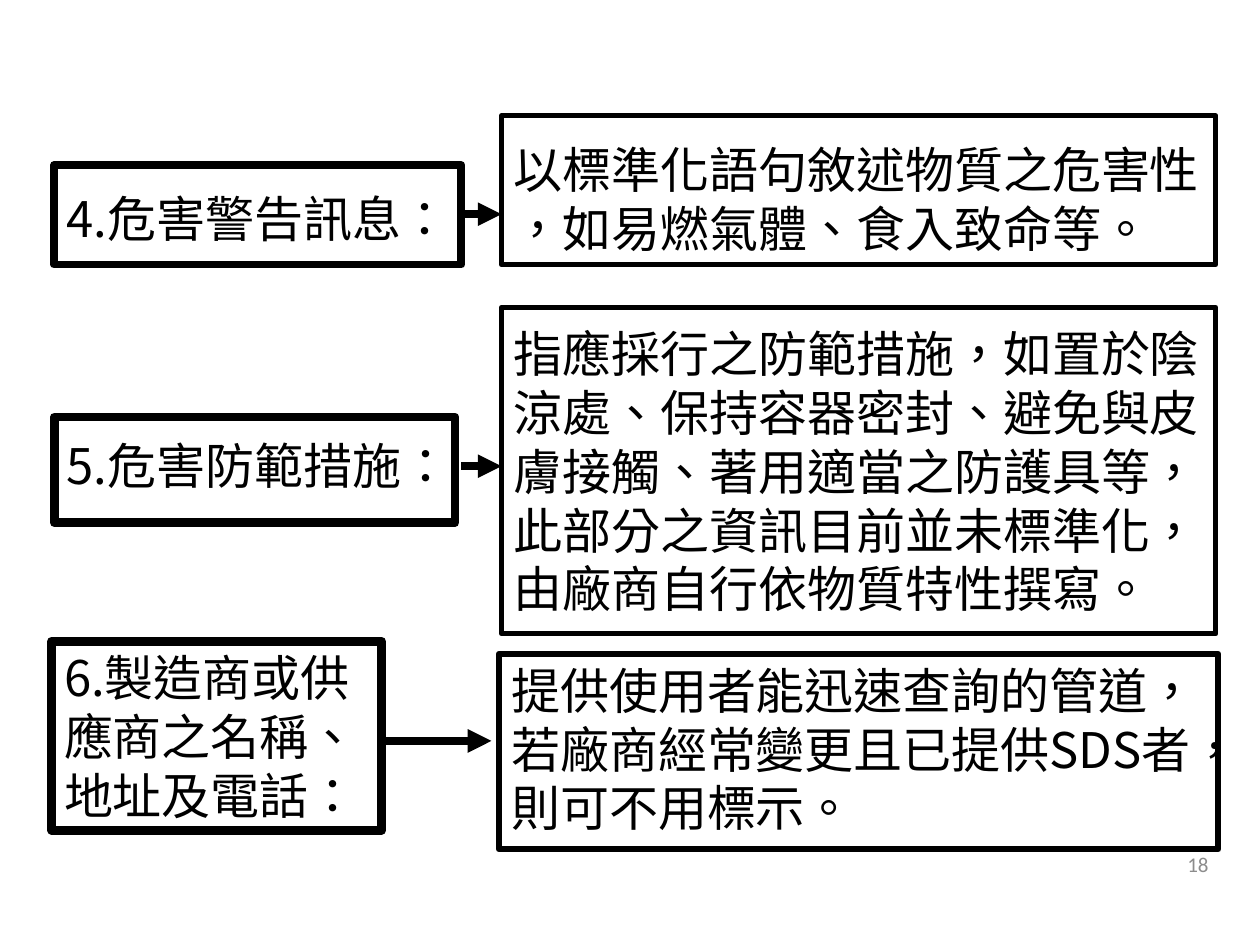
import pptx
import pptx.dml.color
import pptx.enum.lang
import pptx.enum.shapes
import pptx.enum.text
import pptx.oxml.ns
import pptx.util
import lxml.etree
from dataclasses import dataclass

Pt = pptx.util.Pt
Color = pptx.dml.color.RGBColor
Align = pptx.enum.text.PP_ALIGN
Anchor = pptx.enum.text.MSO_ANCHOR


@dataclass(frozen=True)
class Theme:
    ink: Color = Color(0x00, 0x00, 0x00)
    muted: Color = Color(0x8C, 0x8C, 0x8C)
    body_font: str = "Noto Sans CJK SC"
    mark_font: str = "Arial"
    number_font: str = "Calibri"
    body_size: int = 28
    number_size: int = 12
    arrow_width: float = 4.5


class SlideBuilder:
    def __init__(self, slide, theme):
        self.slide = slide
        self.theme = theme

    def frame(self, bounds, width):
        box = self.slide.shapes.add_shape(
            pptx.enum.shapes.MSO_SHAPE.RECTANGLE, *map(Pt, bounds))
        box.shadow.inherit = False
        box.fill.background()
        box.line.color.rgb = self.theme.ink
        box.line.width = Pt(width)
        return box

    def text(self, bounds, lines, **options):
        box = self.slide.shapes.add_textbox(*map(Pt, bounds))
        self.fill_text(box, lines, **options)

    def fill_text(self, box, lines, anchor=Anchor.TOP, wrap=True, grow=False,
                  align=Align.LEFT, spacing=None, fonts=None, size=None, color=None):
        fonts = fonts or (self.theme.body_font, self.theme.mark_font)
        text_frame = box.text_frame
        text_frame.word_wrap = wrap
        text_frame.vertical_anchor = anchor
        if grow:
            text_frame.auto_size = pptx.enum.text.MSO_AUTO_SIZE.SHAPE_TO_FIT_TEXT
        for index, line in enumerate(lines):
            para = text_frame.paragraphs[0] if index == 0 else text_frame.add_paragraph()
            para.alignment = align
            para.line_spacing = spacing
            for position, words in enumerate(line.split("|")):
                span = para.add_run()
                span.text = words
                self.style(span, fonts[position % 2], size or self.theme.body_size,
                           color or self.theme.ink)

    def style(self, span, name, size, color):
        font = span.font
        font.size = Pt(size)
        font.color.rgb = color
        font.name = name
        font.language_id = pptx.enum.lang.MSO_LANGUAGE_ID.TRADITIONAL_CHINESE
        latin = span._r.get_or_add_rPr().find(pptx.oxml.ns.qn("a:latin"))
        east_asian = lxml.etree.Element(pptx.oxml.ns.qn("a:ea"), typeface=name)
        latin.addnext(east_asian)

    def arrow(self, left, right, height):
        arrow = self.slide.shapes.add_connector(
            pptx.enum.shapes.MSO_CONNECTOR.STRAIGHT,
            Pt(left), Pt(height), Pt(right), Pt(height))
        arrow.line.color.rgb = self.theme.ink
        arrow.line.width = Pt(self.theme.arrow_width)
        qn = pptx.oxml.ns.qn
        lxml.etree.SubElement(arrow.line._get_or_add_ln(), qn("a:tailEnd"), type="triangle")
        lxml.etree.SubElement(arrow._element.spPr, qn("a:effectLst"))


def main():
    deck = pptx.Presentation()
    deck.slide_width, deck.slide_height = Pt(720), Pt(540)
    theme = Theme()
    page = SlideBuilder(deck.slides.add_slide(deck.slide_layouts[6]), theme)

    page.frame((31, 94.3, 232.6, 56.9), 4.5)
    page.frame((31, 238.3, 229, 60.5), 5)

    precaution = page.frame((286.6, 175.7, 408.2, 186.5), 3)
    page.fill_text(precaution, [
        "指應採行之防範措施，如置於陰",
        "涼處|、|保持容器密封|、|避免與皮",
        "膚接觸|、|著用適當之防護具等，",
        "此部分之資訊目前並未標準化，",
        "由廠商自行依物質特性撰寫。",
    ], anchor=Anchor.MIDDLE, wrap=False)

    contact = page.frame((285.1, 373.7, 411.1, 111.6), 3.5)
    page.fill_text(contact, [
        "提供使用者能迅速查詢的管道，若廠商經常變更且已提供SDS者，則可不用標示。",
    ], grow=True)

    supplier = page.frame((29.5, 366.5, 188.6, 108), 5)
    page.fill_text(supplier, ["6.製造商或供", "應商之名稱、", "地址及電話："],
                   anchor=Anchor.MIDDLE, wrap=False)

    for left, right, height in (
            (263.5, 286.6, 266.4), (218.2, 280.8, 423.4), (263.5, 286.6, 122.4)):
        page.arrow(left, right, height)

    page.text((31, 104.4, 249.8, 41), ["4.危害警告訊息："], grow=True)
    page.frame((286.6, 66.2, 408.2, 85), 3)
    page.text((286.6, 76.3, 408.2, 74.2), [
        "以標準化語句敘述物質之危害性",
        "，如易燃氣體|、|食入致命等。",
    ], grow=True)
    page.text((31, 249.1, 238.3, 37.4), ["5.危害防範措施："],
              wrap=False, grow=True, spacing=0.9)
    page.text((529.9, 479.5, 167.8, 28.8), ["18"], anchor=Anchor.MIDDLE,
              align=Align.RIGHT, fonts=(theme.number_font,),
              size=theme.number_size, color=theme.muted)

    deck.save("out.pptx")


if __name__ == "__main__":
    main()
